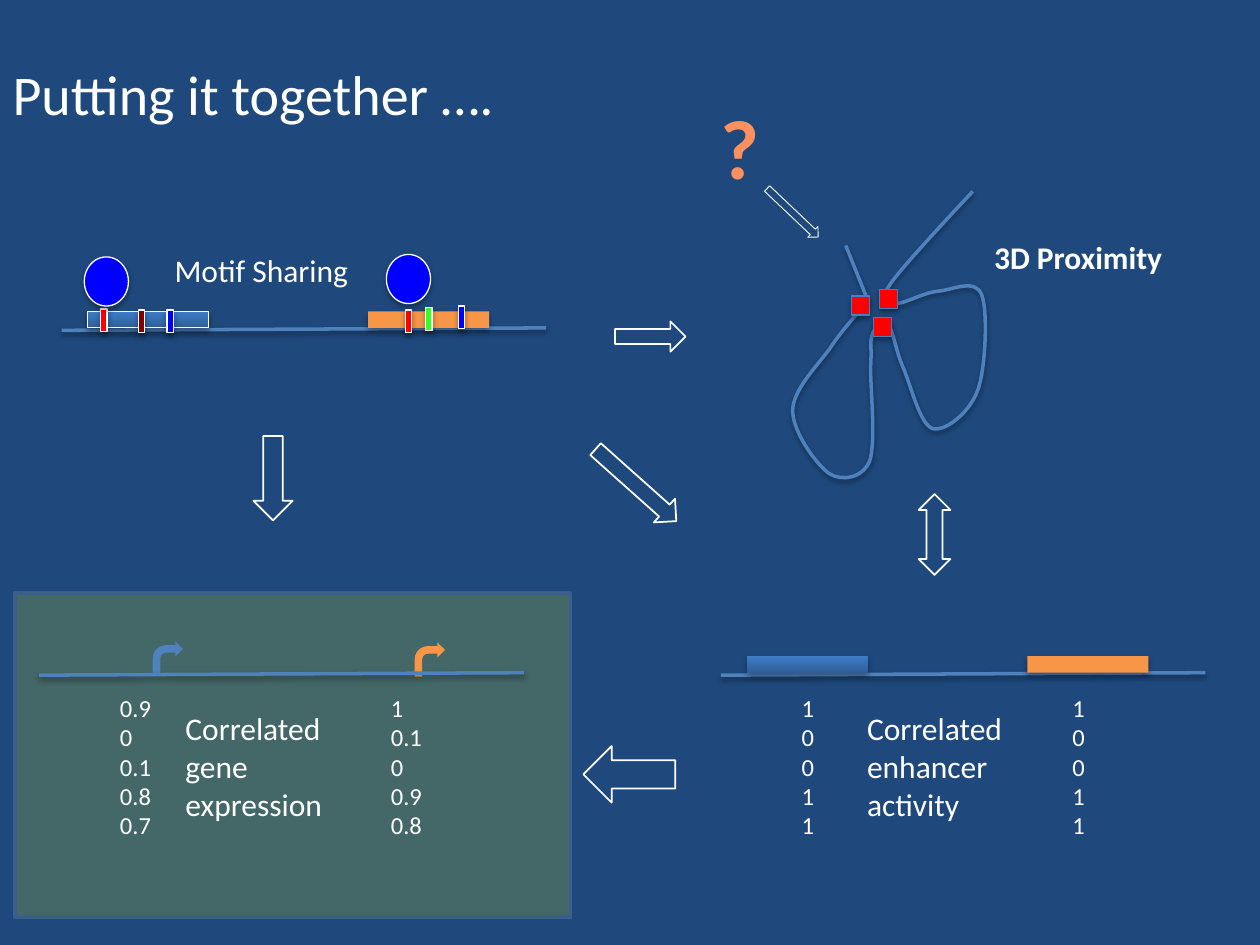
from lxml.etree import SubElement
from pptx import Presentation
from pptx.dml.color import RGBColor
from pptx.enum.shapes import MSO_CONNECTOR, MSO_SHAPE as Preset
from pptx.enum.text import MSO_ANCHOR, MSO_AUTO_SIZE as AutoSize, PP_ALIGN
from pptx.oxml.ns import qn
from pptx.util import Cm, Pt

NAVY, WHITE, BLUE, ORANGE = "1F497D", "FFFFFF", "4F81BD", "F79646"
RED, ROYAL, GREEN, MAROON = "FF0000", "0000FF", "34FF23", "800000"
LOOP_START = [(1.07, 1.09), (1.52, 2.21)]
LOOP_CURVES = [
    (1.4, 2.36), (0.99, 2.79), (0.74, 3.18), (0.48, 3.53), (0, 4.01), (0, 4.42),
    (0, 4.85), (0.48, 5.51), (0.74, 5.69), (0.99, 5.84), (1.4, 5.79), (1.55, 5.44),
    (1.68, 5.08), (1.57, 3.96), (1.57, 3.56), (1.6, 3.12), (1.55, 3.05), (1.6, 2.9),
    (1.65, 2.74), (1.8, 2.51), (1.91, 2.64), (2.01, 2.74), (2.08, 3.23), (2.24, 3.58),
    (2.39, 3.94), (2.57, 4.7), (2.82, 4.78), (3.07, 4.85), (3.56, 4.47), (3.73, 4.01),
    (3.89, 3.58), (3.94, 2.41), (3.81, 2.08), (3.68, 1.75), (3.23, 1.98), (2.95, 2.01),
    (2.64, 2.03), (2.21, 2.29), (2.06, 2.26), (1.91, 2.24), (1.7, 2.24), (1.98, 1.85),
    (2.24, 1.47), (3.63, 0), (3.63, 0),
]


def paint(fill, color):
    """Make a fill solid in a hex colour."""
    fill.solid()
    fill.fore_color.rgb = RGBColor.from_string(color)


def cast_shadow(part, alpha=35, distance=1.81):
    """Give a part a soft shadow straight below it."""
    properties = part._element.spPr
    effects = properties.find(qn("a:effectLst"))
    if effects is None:
        effects = SubElement(properties, qn("a:effectLst"))
    shadow = SubElement(effects, qn("a:outerShdw"), blurRad=str(Pt(3.15)),
                        dist=str(Pt(distance)), dir="5400000", rotWithShape="0")
    tint = SubElement(shadow, qn("a:srgbClr"), val="000000")
    SubElement(tint, qn("a:alpha"), val=str(alpha * 1000))


def add_part(parts, preset, box, color=None, outline=None, width=0.75, shadow=False):
    """Add a preset shape with its fill, outline and optional shadow."""
    part = parts.add_shape(preset, *map(Cm, box))
    part.shadow.inherit = False
    if color:
        paint(part.fill, color)
    else:
        part.fill.background()
    if outline:
        paint(part.line.fill, outline)
        part.line.width = Pt(width)
    else:
        part.line.fill.background()
    if shadow:
        cast_shadow(part)
    return part


def write(frame, lines, size, color=WHITE, bold=False, wrap=False):
    """Write one paragraph per line into a text frame."""
    frame.word_wrap = wrap
    for index, line in enumerate(lines):
        paragraph = frame.add_paragraph() if index else frame.paragraphs[0]
        paragraph.alignment = PP_ALIGN.LEFT
        run = paragraph.add_run()
        run.text = line
        run.font.name, run.font.size, run.font.bold = "Calibri", Pt(size), bold
        paint(run.font.fill, color)


def add_label(parts, box, lines, size=18, **style):
    """Add a text box that grows with its text."""
    frame = parts.add_textbox(*map(Cm, box)).text_frame
    frame.auto_size = AutoSize.SHAPE_TO_FIT_TEXT
    write(frame, lines, size, **style)


def add_dna(parts, left, top):
    """Draw the DNA strand just below the given top."""
    strand = parts.add_connector(MSO_CONNECTOR.STRAIGHT, Cm(left), Cm(top + 0.38),
                                 Cm(left + 9.77), Cm(top + 0.33))
    paint(strand.line.fill, BLUE)
    strand.line.width = Pt(2)
    cast_shadow(strand, 38, 1.57)


def add_enhancers(parts, left, top, outline=None):
    """Draw a DNA strand with a blue and an orange enhancer."""
    add_dna(parts, left, top)
    first = add_part(parts, Preset.RECTANGLE, (left + 0.52, top, 2.44, 0.33),
                     BLUE, outline, shadow=True)
    first.fill.gradient()
    first.fill.gradient_angle = 90
    for stop, color in zip(first.fill.gradient_stops, ("2F5F99", "3D7CC7")):
        stop.color.rgb = RGBColor.from_string(color)
    add_part(parts, Preset.RECTANGLE, (left + 6.18, top, 2.44, 0.33), ORANGE, shadow=True)


def add_title(slide, box):
    """Move and format the title placeholder."""
    title = slide.shapes.title
    title.left, title.top, title.width, title.height = map(Cm, box)
    title.text_frame.auto_size = AutoSize.NONE
    title.text_frame.vertical_anchor = MSO_ANCHOR.TOP
    write(title.text_frame, ["Putting it together …."], 32)


def add_highlight(slide, box):
    """Lay a translucent panel behind the gene expression region."""
    panel = add_part(slide.shapes, Preset.RECTANGLE, box, "FFFF00", "3A5F8C", 2)
    tint = panel._element.spPr.find(qn("a:solidFill"))[0]
    SubElement(tint, qn("a:alpha"), val="17000")


def add_motif_sharing(slide, left, top):
    """Draw two enhancers with motifs and bound proteins."""
    parts = slide.shapes.add_group_shape().shapes
    add_enhancers(parts, left, top + 1.35, WHITE)
    motifs = [(0.79, 1.3, RED), (6.93, 1.32, RED), (8, 1.24, ROYAL),
              (2.13, 1.32, ROYAL), (7.34, 1.27, GREEN), (1.55, 1.32, MAROON)]
    for x, y, color in motifs:
        add_part(parts, Preset.RECTANGLE, (left + x, top + y, 0.13, 0.46),
                 color, WHITE, shadow=True)
    for x, y in [(0.46, 0.25), (6.55, 0.2)]:
        add_part(parts, Preset.OVAL, (left + x, top + y, 0.89, 0.99),
                 ROYAL, WHITE, shadow=True)
    add_label(parts, (left + 2.03, top, 4.06, 1.02), ["Motif Sharing"])


def add_proximity(slide, left, top):
    """Draw the folded strand with its touching sites."""
    parts = slide.shapes.add_group_shape().shapes
    points = [(Cm(x), Cm(y)) for x, y in LOOP_START + LOOP_CURVES]
    builder = parts.build_freeform(*points[0])
    builder.add_line_segments(points[1:], close=False)
    loop = builder.convert_to_shape(Cm(left), Cm(top))
    outline = loop._element.spPr.find(".//" + qn("a:path"))
    corners = outline.findall(qn("a:lnTo"))[1:]
    for start in range(0, len(corners), 3):
        curve = SubElement(outline, qn("a:cubicBezTo"))
        for corner in corners[start:start + 3]:
            curve.append(corner[0])
            outline.remove(corner)
    loop.shadow.inherit = False
    loop.fill.background()
    paint(loop.line.fill, BLUE)
    loop.line.width = Pt(2)
    cast_shadow(loop, 38, 1.57)
    for x, y in [(1.19, 2.11), (1.63, 2.54), (1.75, 1.98)]:
        add_part(parts, Preset.RECTANGLE, (left + x, top + y, 0.36, 0.38),
                 RED, "4B7EBC", shadow=True)
    add_label(parts, (left + 3.81, top + 0.81, 3.94, 1.02), ["3D Proximity"], bold=True)


def add_correlation(parts, left, top, caption, columns, width):
    """Write a caption between two columns of values."""
    for x, values in zip((1.38, 6.84), columns):
        add_label(parts, (left + x, top + 0.61, width, 3.25), values, 14)
    add_label(parts, (left + 2.7, top + 0.94, 3.84, 2.57), caption, wrap=True)


def add_enhancer_activity(slide, left, top):
    """Draw the enhancers with their correlated activity."""
    parts = slide.shapes.add_group_shape().shapes
    add_enhancers(parts, left, top)
    add_correlation(parts, left, top, ["Correlated enhancer activity"],
                    ["10011", "10011"], 0.79)


def add_gene_expression(slide, left, top):
    """Draw the two genes with their correlated expression."""
    parts = slide.shapes.add_group_shape().shapes
    for x, y, color in [(2.29, -0.3, BLUE), (7.57, -0.28, ORANGE)]:
        add_part(parts, Preset.BENT_ARROW, (left + x, top + y, 0.61, 0.69), color)
    add_dna(parts, left, top)
    add_correlation(parts, left, top, ["Correlated gene", "expression"],
                    [["0.9", "0", "0.1", "0.8", "0.7"],
                     ["1", "0.1", "0", "0.9", "0.8"]], 1.19)


def add_flow(slide):
    """Draw the hollow arrows between regions and the open question."""
    arrows = [
        (Preset.RIGHT_ARROW, (11.76, 15.04, 1.85, 1.14), 180, 1),
        (Preset.RIGHT_ARROW, (12.4, 6.48, 1.42, 0.61), 0, 1),
        (Preset.DOWN_ARROW, (5.11, 8.79, 0.79, 1.7), 0, 1),
        (Preset.DOWN_ARROW, (12.5, 8.69, 0.64, 2.18), 311.7, 1),
        (Preset.RIGHT_ARROW, (15.27, 4.14, 1.42, 0.3), 43.5, 0.5),
        (Preset.UP_DOWN_ARROW, (18.52, 9.96, 0.64, 1.63), 0, 1),
    ]
    for preset, box, turn, width in arrows:
        add_part(slide.shapes, preset, box, None, WHITE, width).rotation = turn
    add_label(slide.shapes, (14.27, 1.8, 1.55, 2.31), ["?"], 48, color="FC9060", bold=True)


def main():
    """Build the slide and save it."""
    deck = Presentation()
    deck.slide_width, deck.slide_height = Cm(25.4), Cm(19.05)
    slide = deck.slides.add_slide(deck.slide_layouts[5])
    paint(slide.background.fill, NAVY)
    add_title(slide, (0, 1.07, 10.34, 1.63))
    add_highlight(slide, (0.3, 11.96, 11.2, 6.53))
    add_motif_sharing(slide, 1.24, 4.93)
    add_proximity(slide, 15.98, 3.86)
    add_enhancer_activity(slide, 14.53, 13.23)
    add_gene_expression(slide, 0.79, 13.23)
    add_flow(slide)
    deck.save("out.pptx")


if __name__ == "__main__":
    main()
